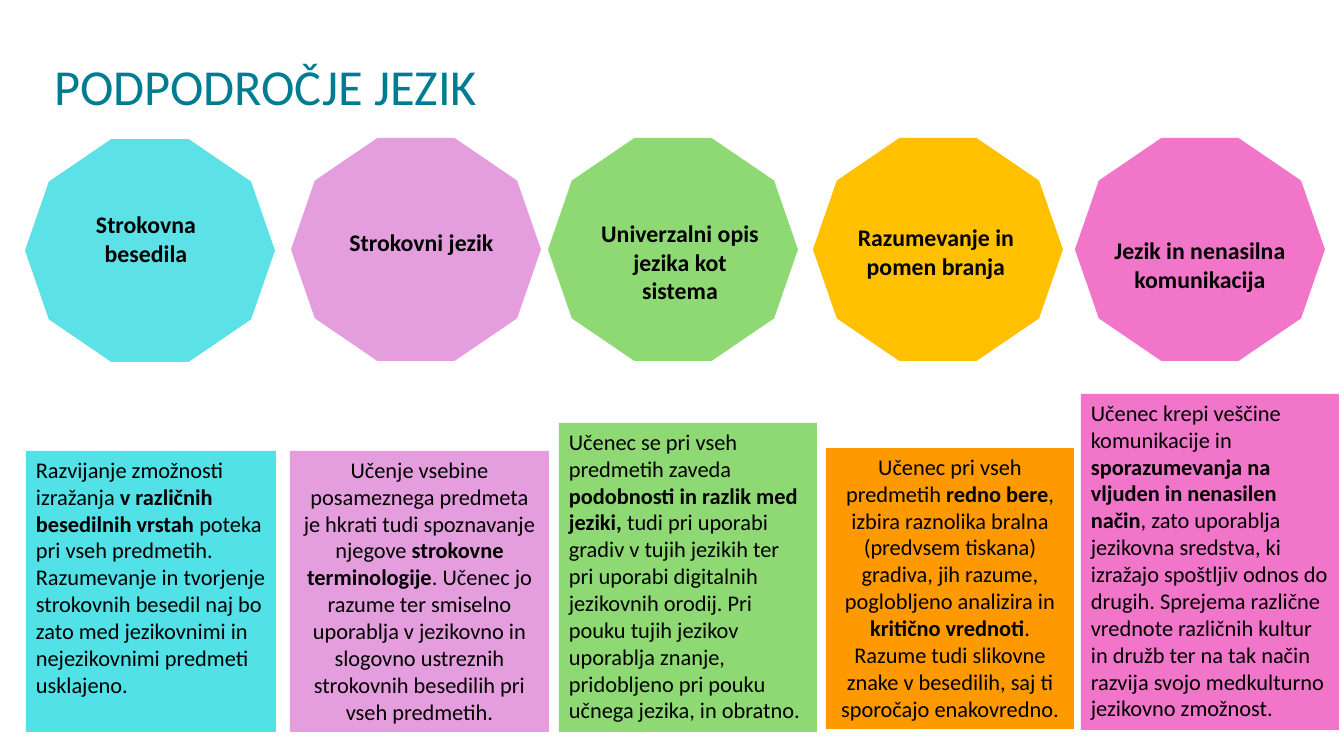
from pptx import Presentation
from pptx.dml.color import RGBColor
from pptx.enum.shapes import MSO_SHAPE
from pptx.enum.text import MSO_ANCHOR, MSO_AUTO_SIZE, PP_ALIGN
from pptx.util import Pt

PX = 12192000 / 1344
TEAL = RGBColor(0x00, 0x7C, 0x92)
BLACK = RGBColor(0x00, 0x00, 0x00)
AQUA = RGBColor(0x5C, 0xE1, 0xE6)
CYAN = RGBColor(0x52, 0xE1, 0xE6)
LILAC = RGBColor(0xE5, 0x9E, 0xDD)
GREEN = RGBColor(0x8E, 0xD9, 0x73)
GOLD = RGBColor(0xFF, 0xC0, 0x00)
AMBER = RGBColor(0xFF, 0x99, 0x00)
PINK = RGBColor(0xF1, 0x75, 0xC8)
LEFT, MID = PP_ALIGN.LEFT, PP_ALIGN.CENTER

# Each topic: badge box, badge fill, label, label box, card box, card fill, card alignment, card text.
TOPICS = [
    ((25, 139, 250, 223), AQUA, "Strokovna besedila", (24, 66, 194, 68),
     (26, 451, 250, 281), CYAN, LEFT,
     "Razvijanje zmožnosti izražanja *v različnih besedilnih vrstah *poteka pri vseh "
     "predmetih. Razumevanje in tvorjenje strokovnih besedil naj bo zato med "
     "jezikovnimi in nejezikovnimi predmeti usklajeno."),
    ((291, 138, 250, 223), LILAC, "Strokovni jezik", (44, 85, 173, 39),
     (290, 451, 259, 281), LILAC, MID,
     "Učenje vsebine posameznega predmeta je hkrati tudi spoznavanje njegove "
     "*strokovne terminologije*. Učenec jo razume ter smiselno uporablja v jezikovno "
     "in slogovno ustreznih strokovnih besedilih pri vseh predmetih."),
    ((548, 138, 250, 223), GREEN, "Univerzalni opis jezika kot sistema", (35, 76, 194, 97),
     (559, 423, 258, 309), GREEN, LEFT,
     "Učenec se pri vseh predmetih zaveda *podobnosti in razlik med jeziki, *tudi pri "
     "uporabi gradiv v tujih jezikih ter pri uporabi digitalnih jezikovnih orodij. Pri "
     "pouku tujih jezikov uporablja znanje, pridobljeno pri pouku učnega jezika, in "
     "obratno."),
    ((813, 138, 250, 223), GOLD, "Razumevanje in pomen branja", (26, 80, 194, 68),
     (826, 448, 248, 281), AMBER, MID,
     "Učenec pri vseh predmetih *redno bere*, izbira raznolika bralna (predvsem "
     "tiskana) gradiva, jih razume, poglobljeno analizira in *kritično vrednoti*. "
     "Razume tudi slikovne znake v besedilih, saj ti sporočajo enakovredno."),
    ((1075, 138, 250, 223), PINK, "Jezik in nenasilna komunikacija", (28, 93, 194, 68),
     (1081, 394, 258, 336), PINK, LEFT,
     "Učenec krepi veščine komunikacije in *sporazumevanja na vljuden in nenasilen "
     "način*, zato uporablja jezikovna sredstva, ki izražajo spoštljiv odnos do drugih. "
     "Sprejema različne vrednote različnih kultur in družb ter na tak način razvija "
     "svojo medkulturno jezikovno zmožnost."),
]


def emu(box):
    """Turn a box in px into EMU."""
    return [round(n * PX) for n in box]


def style(para, size, color, align):
    """Format a whole paragraph."""
    para.alignment = align
    para.font.name = "Calibri"
    para.font.size = Pt(size)
    para.font.color.rgb = color


def block(slide, kind, box, fill):
    """Draw a plain filled shape."""
    shape = slide.shapes.add_shape(kind, *emu(box))
    shape.shadow.inherit = False
    shape.fill.solid()
    shape.fill.fore_color.rgb = fill
    shape.line.fill.background()
    return shape


def head(slide, box, text):
    """Place the title."""
    title = slide.shapes.title
    title.left, title.top, title.width, title.height = emu(box)
    frame = title.text_frame
    frame.text = text
    frame.auto_size = MSO_AUTO_SIZE.NONE
    frame.vertical_anchor = MSO_ANCHOR.MIDDLE
    para = frame.paragraphs[0]
    para.line_spacing = 0.9
    style(para, 36, TEAL, LEFT)


def badge(slide, box, fill, text, inner):
    """Draw a decagon with its label, placed relative to it."""
    block(slide, MSO_SHAPE.DECAGON, box, fill)
    x, y, w, h = inner
    label = slide.shapes.add_textbox(*emu((box[0] + x, box[1] + y, w, h)))
    frame = label.text_frame
    frame.word_wrap = True
    frame.text = text
    para = frame.paragraphs[0]
    style(para, 17, BLACK, MID)
    para.font.bold = True


def card(slide, box, fill, align, text):
    """Draw a text card; asterisks enclose bold words."""
    frame = block(slide, MSO_SHAPE.RECTANGLE, box, fill).text_frame
    frame.word_wrap = True
    frame.vertical_anchor = MSO_ANCHOR.TOP
    para = frame.paragraphs[0]
    style(para, 16, BLACK, align)
    for i, part in enumerate(text.split("*")):
        run = para.add_run()
        run.text = part
        if i % 2:
            run.font.bold = True


def main():
    """Build and save the slide."""
    deck = Presentation()
    deck.slide_width, deck.slide_height = emu((1344, 756))
    slide = deck.slides.add_slide(deck.slide_layouts[5])
    head(slide, (44, 16, 1159, 146), "PODPODROČJE JEZIK")
    for spot, tint, name, inner, box, fill, align, text in TOPICS:
        badge(slide, spot, tint, name, inner)
        card(slide, box, fill, align, text)
    deck.save("out.pptx")


if __name__ == "__main__":
    main()
